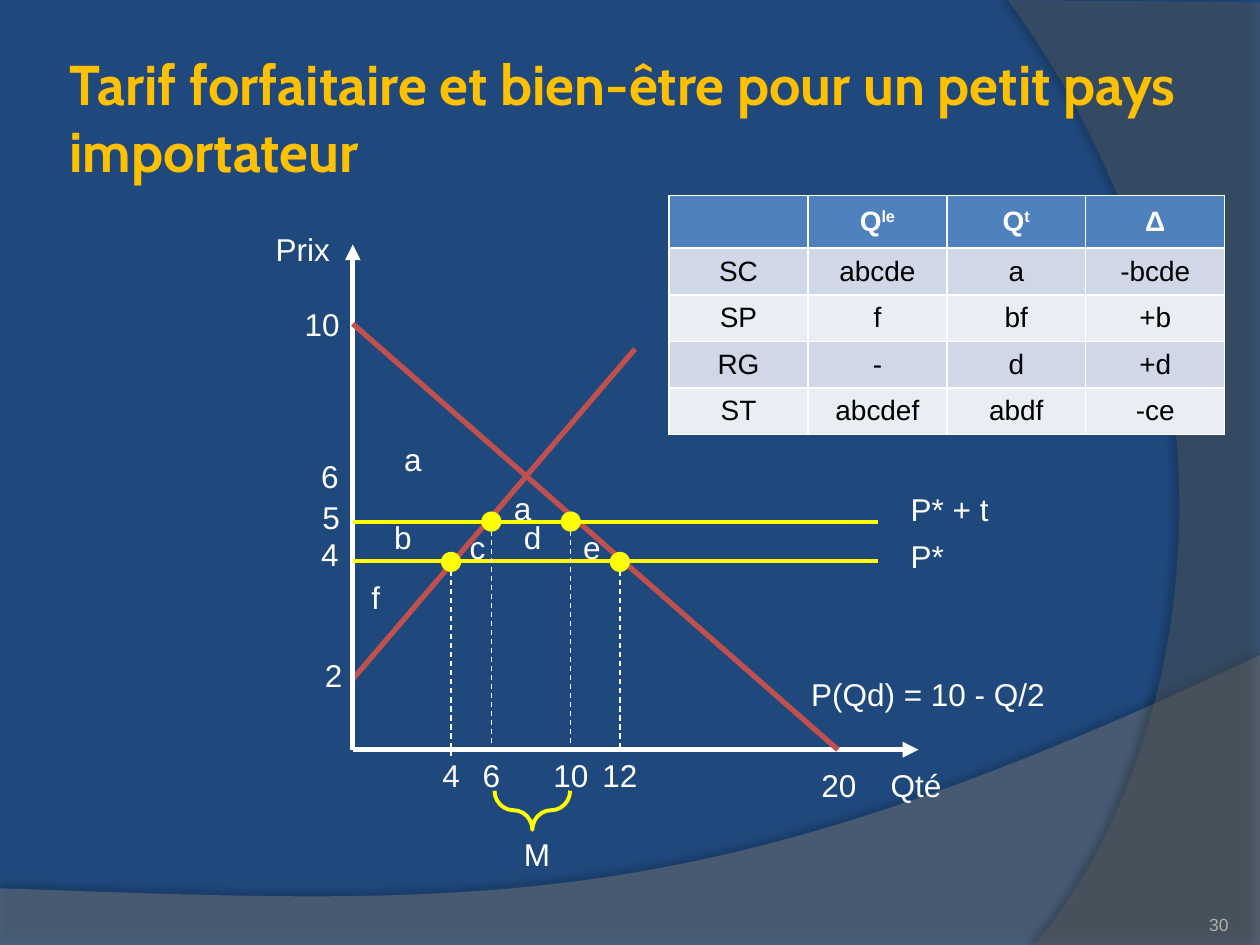
from dataclasses import dataclass
from typing import NamedTuple

from lxml.etree import SubElement
from pptx import Presentation
from pptx.dml.color import RGBColor as RGB
from pptx.enum.dml import MSO_LINE as Dash
from pptx.enum.shapes import MSO_CONNECTOR as Link, MSO_SHAPE as Form
from pptx.enum.text import MSO_ANCHOR as Anchor, MSO_AUTO_SIZE as Fit, PP_ALIGN as Align
from pptx.oxml.ns import qn
from pptx.util import Inches, Pt


@dataclass(frozen=True)
class Theme:
    back: str = "1F497D"
    title: str = "FFC000"
    text: str = "FFFFFF"
    dark: str = "000000"
    curve: str = "C0504D"
    mark: str = "FFFF00"
    page: str = "B0AFA6"
    head: str = "4F81BD"
    bands: tuple = ("D0D8E8", "E9EDF4")
    font: str = "Arial"
    bold: str = "Cabin"
    big: int = 32
    body: int = 18
    cell: int = 16
    small: int = 10


class Line(NamedTuple):
    x1: float
    y1: float
    x2: float
    y2: float
    color: str
    width: float
    dash: bool = False
    arrow: bool = False


class Label(NamedTuple):
    text: str
    x: float
    y: float
    w: float = 0.34
    align: Align = Align.LEFT


class Point(NamedTuple):
    qty: str
    x: float
    y: float
    foot: float = 5.95


class Wave(NamedTuple):
    start: tuple
    curve: tuple
    ends: tuple
    color: str
    alpha: int
    shade: int
    angle: int


T = Theme()
BASE, LEFT, EDGE = 5.95, 2.8, 6.97

WAVES = [
    Wave((10, 5.2), ((10, 5.2), (5.59, 7.29), (3.91, 7.19), (0, 7.05)),
         ((0, 7.5), (10, 7.5)), "7F7F7F", 45, 35, 270),
    Wave((8.21, 7.5), ((8.21, 7.5), (9.35, 6.19), (10.18, 3), (8, 0)),
         ((10, 0.02), (10, 7.5)), "5E5E5E", 40, 45, 180),
]
POINTS = [
    Point("4", 3.58, 4.46, 6),
    Point("6", 3.9, 4.14),
    Point("10", 4.53, 4.14),
    Point("12", 4.92, 4.46),
]
LINES = [
    Line(LEFT, 5.39, 5.04, 2.77, T.curve, 3),
    Line(LEFT, BASE, 7.29, BASE, T.text, 3, arrow=True),
    Line(LEFT, BASE, LEFT, 1.94, T.text, 3, arrow=True),
    Line(LEFT, 2.57, 6.65, BASE, T.curve, 3),
    *(Line(LEFT, y, EDGE, y, T.mark, 2.25) for y in (4.45, 4.14)),
    *(Line(p.x, p.y, p.x, p.foot, T.text, 0.75, dash=True) for p in POINTS),
]
LABELS = [
    Label("Qté", EDGE, 6.03, 0.61), Label("Prix", 2.09, 1.78, 0.64),
    Label("20", 6.42, 6.03, 0.48), Label("P(Qd) = 10 - Q/2", 6.34, 5.31, 2.07),
    Label("10", 2.32, 2.37, 0.48), Label("6", 2.45, 3.58), Label("5", 2.46, 3.9),
    Label("4", 2.45, 4.2), Label("2", 2.48, 5.16), Label("M", 4.06, 6.58, 0.41),
    Label("P*", 7.13, 4.21, 0.47), Label("P* + t", 7.13, 3.84, 0.83),
    Label("a", 3.11, 3.44), Label("a", 3.98, 3.83), Label("b", 3.03, 4.06),
    Label("c", 3.63, 4.14, 0.33), Label("d", 4.06, 4.06), Label("e", 4.53, 4.14),
    Label("f", 2.85, 4.54, 0.27),
    *(Label(p.qty, p.x - 0.24, BASE, 0.48, Align.CENTER) for p in POINTS),
]
ROWS = [
    ("", "Q^le", "Q^t", "Δ"),
    ("SC", "abcde", "a", "-bcde"),
    ("SP", "f", "bf", "+b"),
    ("RG", "-", "d", "+d"),
    ("ST", "abcdef", "abdf", "-ce"),
]


def tone(fill, color: str) -> None:
    """Make a fill solid in one colour."""
    fill.solid()
    fill.fore_color.rgb = RGB.from_string(color)


def style(run, color: str, size: int, bold: bool = False, font: str = T.font) -> None:
    """Set the font of a run."""
    run.font.name, run.font.size, run.font.bold = font, Pt(size), bold
    run.font.color.rgb = RGB.from_string(color)


def bezier(curve: tuple, steps: int = 60) -> list:
    """Sample a cubic curve after its first point."""
    a, b, c, d = curve
    spots = []
    for i in range(1, steps + 1):
        t = i / steps
        u = 1 - t
        spots.append(tuple(u**3 * p + 3 * u * u * t * q + 3 * u * t * t * r + t**3 * s
                           for p, q, r, s in zip(a, b, c, d)))
    return spots


def draw_wave(shapes, wave: Wave) -> None:
    """Draw a clear curved band with a soft shadow."""
    pen = shapes.build_freeform(*map(Inches, wave.start))
    spots = [*bezier(wave.curve), *wave.ends]
    pen.add_line_segments([(Inches(x), Inches(y)) for x, y in spots], close=True)
    band = pen.convert_to_shape()
    tone(band.fill, wave.color)
    band.line.fill.background()
    band.shadow.inherit = False
    props = band._element.spPr
    tint = props.find(qn("a:solidFill"))[0]
    SubElement(tint, qn("a:alpha"), val=str(wave.alpha * 1000))
    glow = SubElement(props.find(qn("a:effectLst")), qn("a:outerShdw"), blurRad=str(Pt(4)),
                      dist=str(Pt(4)), dir=str(wave.angle * 60000), rotWithShape="0")
    ink = SubElement(glow, qn("a:srgbClr"), val=T.dark)
    SubElement(ink, qn("a:alpha"), val=str(wave.shade * 1000))


def draw_line(shapes, line: Line) -> None:
    """Draw a straight line or an arrow."""
    link = shapes.add_connector(Link.STRAIGHT, *map(Inches, line[:4]))
    link.line.color.rgb = RGB.from_string(line.color)
    link.line.width = Pt(line.width)
    if line.dash:
        link.line.dash_style = Dash.DASH
    props = link._element.spPr
    if line.arrow:
        SubElement(props.find(qn("a:ln")), qn("a:tailEnd"), type="triangle")
    SubElement(props, qn("a:effectLst"))


def draw_label(shapes, label: Label) -> None:
    """Write a short label on the graph."""
    box = shapes.add_textbox(*map(Inches, (label.x, label.y, label.w, 0.4)))
    frame = box.text_frame
    frame.text, frame.word_wrap = label.text, False
    frame.paragraphs[0].alignment = label.align
    style(frame.paragraphs[0].runs[0], T.text, T.body)


def draw_dot(shapes, point: Point) -> None:
    """Mark a crossing with a dot."""
    dot = shapes.add_shape(Form.FLOWCHART_CONNECTOR, Inches(point.x - 0.08),
                           Inches(point.y - 0.08), Inches(0.16), Inches(0.16))
    tone(dot.fill, T.mark)
    dot.line.fill.background()
    dot.shadow.inherit = False


def draw_brace(shapes) -> None:
    """Draw the brace that spans the imports."""
    brace = shapes.add_shape(Form.LEFT_BRACE, *map(Inches, (4.07, 6.13, 0.31, 0.6)))
    brace.rotation = 270
    brace.adjustments[0] = 0.5
    brace.fill.background()
    brace.line.color.rgb = RGB.from_string(T.mark)
    brace.line.width = Pt(2.25)
    brace.shadow.inherit = False


def draw_table(shapes) -> None:
    """Build the welfare table, with raised marks after a caret."""
    size = map(Inches, (5.31, 1.55, 4.41, 1.89))
    grid = shapes.add_table(len(ROWS), len(ROWS[0]), *size).table
    for i, row in enumerate(ROWS):
        grid.rows[i].height = Inches(0.37 if i else 0.42)
        for j, text in enumerate(row):
            cell = grid.cell(i, j)
            cell.vertical_anchor = Anchor.MIDDLE
            tone(cell.fill, T.bands[(i - 1) % 2] if i else T.head)
            para = cell.text_frame.paragraphs[0]
            para.alignment = Align.CENTER
            for k, part in enumerate(text.split("^")):
                run = para.add_run()
                run.text = part
                style(run, T.dark if i else T.text, T.cell, bold=not i)
                if k:
                    run._r.get_or_add_rPr().set("baseline", "30000")


def place_title(shapes) -> None:
    """Fill the title and bring it above the bands."""
    title = shapes.title
    shapes._spTree.append(title._element)
    title.left, title.top, title.width, title.height = map(Inches, (0.5, 0.3, 9.22, 1.25))
    frame = title.text_frame
    frame.text = "Tarif forfaitaire et bien-être pour un petit pays importateur"
    frame.word_wrap, frame.auto_size, frame.vertical_anchor = True, Fit.NONE, Anchor.MIDDLE
    frame.margin_left = frame.margin_right = Inches(0.05)
    frame.margin_top = frame.margin_bottom = Inches(0.05)
    frame.paragraphs[0].alignment = Align.LEFT
    style(frame.paragraphs[0].runs[0], T.title, T.big, True, T.bold)


def place_page(shapes) -> None:
    """Write the page number in the corner."""
    frame = shapes.add_textbox(*map(Inches, (8.92, 7.02, 0.83, 0.4))).text_frame
    frame.margin_left = frame.margin_right = frame.margin_top = frame.margin_bottom = 0
    frame.text, frame.word_wrap, frame.vertical_anchor = "30", True, Anchor.BOTTOM
    frame.paragraphs[0].alignment = Align.RIGHT
    style(frame.paragraphs[0].runs[0], T.page, T.small)


def main() -> None:
    """Build the slide and save it."""
    deck = Presentation()
    deck.slide_width, deck.slide_height = Inches(10), Inches(7.5)
    slide = deck.slides.add_slide(deck.slide_layouts[5])
    tone(slide.background.fill, T.back)
    shapes = slide.shapes
    for wave in WAVES:
        draw_wave(shapes, wave)
    place_title(shapes)
    for line in LINES:
        draw_line(shapes, line)
    for point in POINTS:
        draw_dot(shapes, point)
    draw_brace(shapes)
    for label in LABELS:
        draw_label(shapes, label)
    place_page(shapes)
    draw_table(shapes)
    deck.save("out.pptx")


if __name__ == "__main__":
    main()
